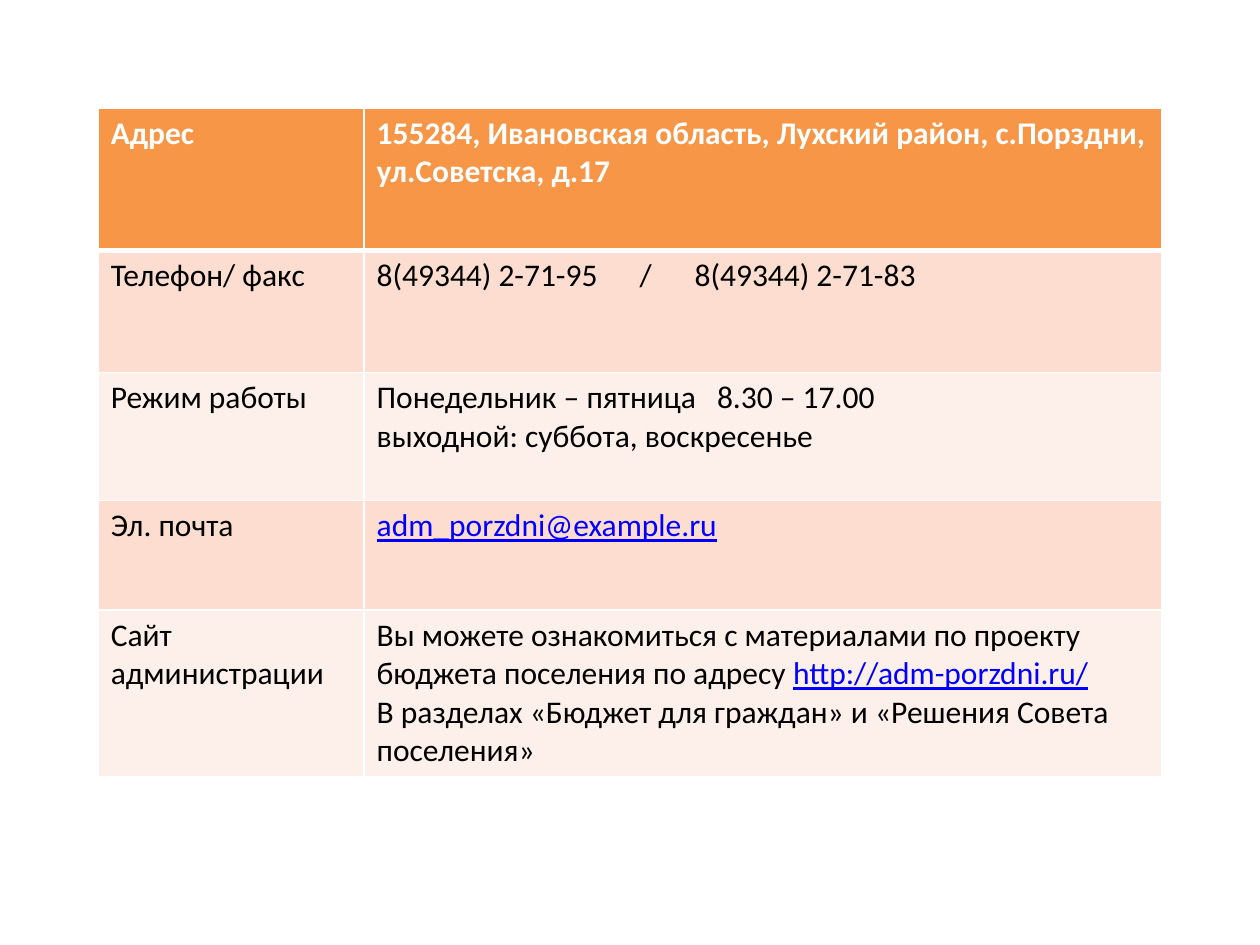
from dataclasses import dataclass

from lxml.etree import SubElement, Element
from pptx import Presentation
from pptx.dml.color import RGBColor as Rgb
from pptx.oxml.ns import qn
from pptx.util import Cm, Pt


@dataclass(frozen=True)
class Theme:
    font: str = "Calibri"
    size: int = 18
    header: str = "F79646"
    bands: tuple = ("FCDDCF", "FDEFE9")
    light: str = "FFFFFF"
    dark: str = "000000"
    link: str = "0000FF"
    rule: int = 1
    header_rule: int = 3


@dataclass(frozen=True)
class Link:
    text: str


THEME = Theme()
LABEL_SHARE = 0.25
ROW_HEIGHTS = (2.87, 2.46, 2.58, 2.21, 3.35)
CONTACTS = (
    ("Адрес", [["155284, Ивановская область, Лухский район, с.Порздни, ул.Советска, д.17"]], ()),
    ("Телефон/ факс", [["8(49344) 2-71-95\t/\t8(49344) 2-71-83"]], (5.3, 6.41)),
    ("Режим работы",
     [["Понедельник – пятница\t8.30 – 17.00"], ["выходной: суббота, воскресенье"]], (6.86,)),
    ("Эл. почта", [[Link("adm_porzdni@example.ru")]], ()),
    ("Сайт администрации",
     [["Вы можете ознакомиться с материалами по проекту бюджета поселения по адресу ",
       Link("http://adm-porzdni.ru/")],
      ["В разделах «Бюджет для граждан» и «Решения Совета поселения»"]], ()),
)


def set_borders(cell, top, bottom):
    properties = cell._tc.get_or_add_tcPr()
    widths = (("lnL", THEME.rule), ("lnR", THEME.rule), ("lnT", top), ("lnB", bottom))
    for place, (side, width) in enumerate(widths):
        line = Element(qn(f"a:{side}"), w=str(Pt(width)))
        fill = SubElement(line, qn("a:solidFill"))
        SubElement(fill, qn("a:srgbClr"), val=THEME.light)
        properties.insert(place, line)


def set_tabs(para, stops):
    tabs = Element(qn("a:tabLst"))
    for stop in stops:
        SubElement(tabs, qn("a:tab"), pos=str(Cm(stop)), algn="l")
    para._p.get_or_add_pPr().insert(0, tabs)


def write_cell(cell, lines, is_header, stops=()):
    frame = cell.text_frame
    for index, parts in enumerate(lines):
        para = frame.add_paragraph() if index else frame.paragraphs[0]
        para.font.name = THEME.font
        para.font.size = Pt(THEME.size)
        para.font.bold = is_header
        para.font.color.rgb = Rgb.from_string(THEME.light if is_header else THEME.dark)
        if stops:
            set_tabs(para, stops)
        for part in parts:
            span = para.add_run()
            if isinstance(part, Link):
                span.text = part.text
                span.font.underline = True
                span.font.color.rgb = Rgb.from_string(THEME.link)
            else:
                span.text = part


def add_contact_table(page, left, top, width):
    heights = [Cm(height) for height in ROW_HEIGHTS]
    table = page.shapes.add_table(len(CONTACTS), 2, left, top, width, sum(heights)).table
    table.columns[0].width = int(width * LABEL_SHARE)
    table.columns[1].width = width - table.columns[0].width
    for index, (label, lines, stops) in enumerate(CONTACTS):
        is_header = index == 0
        table.rows[index].height = heights[index]
        color = THEME.header if is_header else THEME.bands[(index - 1) % 2]
        label_cell, value_cell = table.rows[index].cells
        write_cell(label_cell, [[label]], is_header)
        write_cell(value_cell, lines, is_header, stops)
        for cell in (label_cell, value_cell):
            cell.fill.solid()
            cell.fill.fore_color.rgb = Rgb.from_string(color)
            set_borders(cell,
                        THEME.header_rule if index == 1 else THEME.rule,
                        THEME.header_rule if is_header else THEME.rule)


def main():
    deck = Presentation()
    deck.slide_width, deck.slide_height = Cm(25.4), Cm(19.05)
    page = deck.slides.add_slide(deck.slide_layouts[6])
    add_contact_table(page, Cm(1.98), Cm(2.18), Cm(21.44))
    deck.save("out.pptx")


if __name__ == "__main__":
    main()
